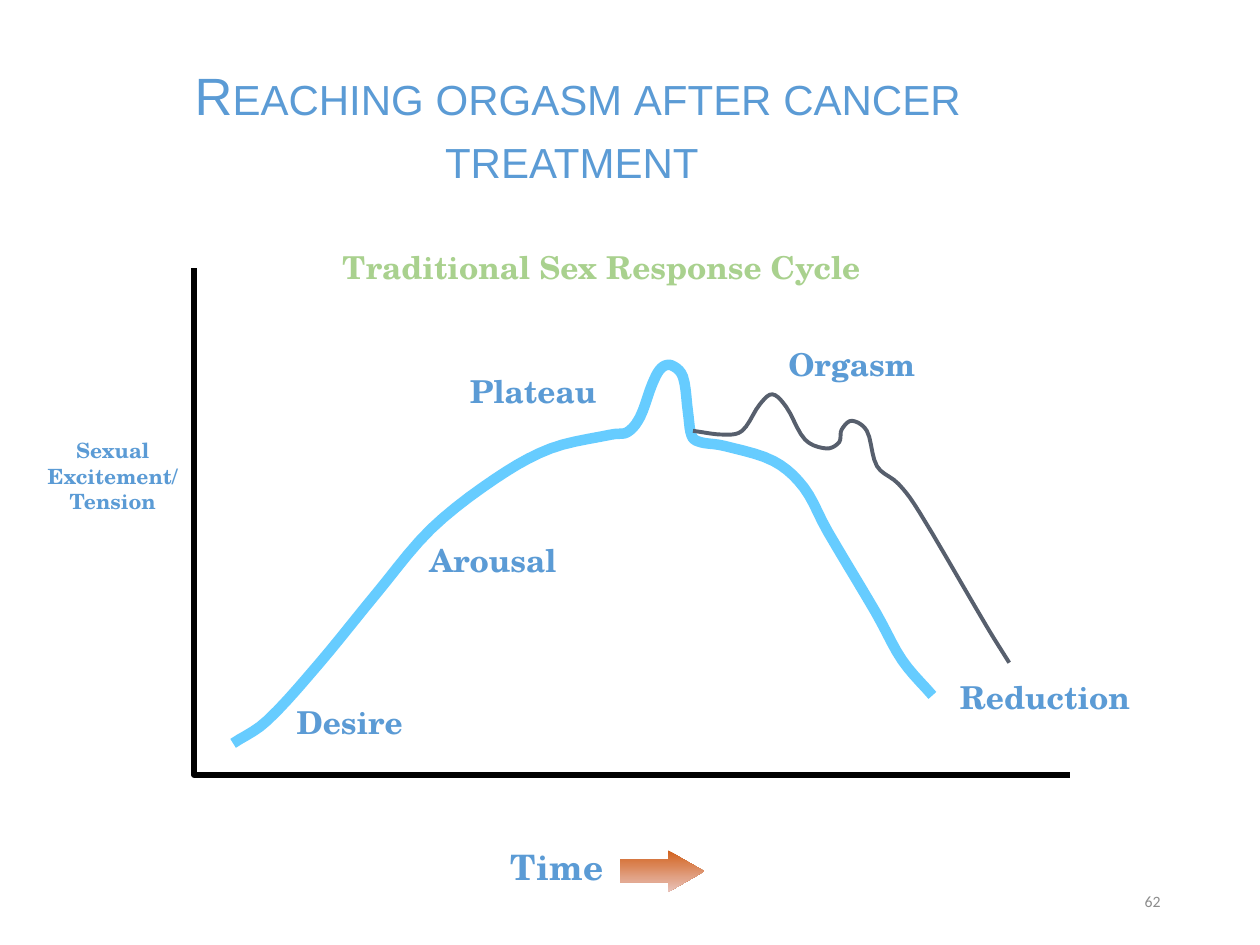
from copy import deepcopy
from itertools import accumulate, chain
from math import dist, sqrt
from pptx import Presentation
from pptx.dml import color
from pptx.enum import shapes, text
from pptx.oxml import ns
from pptx.util import Inches, Pt

SERIF = "TeX Gyre Schola"
BLUE, GREEN, SKY, SLATE, GREY, BLACK = "5B9BD5", "A9D18E", "66CCFF", "575F6D", "8C8C8C", "000000"
ARROW_TOP, ARROW_BOTTOM = "D2611C", "E9C3BB"
LEFT, CENTER, RIGHT = text.PP_ALIGN.LEFT, text.PP_ALIGN.CENTER, text.PP_ALIGN.RIGHT
LABEL_HEIGHT = 0.4
STEPS_PER_SPAN = 5

AXIS_LEFT, AXIS_TOP, AXIS_RIGHT, AXIS_BOTTOM = 1.54, 2.13, 8.49, 6.15
SINGLE_ORGASM = {
    "desire": [(1.85, 5.9), (2.12, 5.72), (2.53, 5.27)],
    "arousal": [(2.98, 4.72), (3.42, 4.2), (3.93, 3.8)],
    "plateau": [(4.37, 3.56), (4.85, 3.45), (4.98, 3.43)],
    "climb": [(5.08, 3.31), (5.18, 3.04), (5.25, 2.92)],
    "orgasm": [(5.33, 2.9), (5.42, 2.99), (5.46, 3.27), (5.49, 3.46)],
    "easing": [(5.56, 3.51), (5.75, 3.54), (6.14, 3.66)],
    "reduction": [(6.38, 3.87), (6.57, 4.22), (6.95, 4.86), (7.16, 5.24), (7.4, 5.52)],
}
REPEAT_ORGASMS = {
    "plateau": [(5.5, 3.42), (5.74, 3.45), (5.89, 3.42)],
    "second orgasm": [(6.03, 3.21), (6.13, 3.13), (6.24, 3.23)],
    "dip": [(6.39, 3.49), (6.56, 3.56), (6.66, 3.51)],
    "third orgasm": [(6.68, 3.41), (6.76, 3.34), (6.88, 3.42), (6.96, 3.7)],
    "reduction": [(7.13, 3.84), (7.3, 4.07), (7.83, 4.97), (8.01, 5.26)],
}
PHASE_LABELS = [
    ("Desire", 2.25, 5.53, 1.05, CENTER),
    ("Arousal", 3.31, 4.24, 1.22, LEFT),
    ("Plateau", 3.63, 2.9, 1.22, LEFT),
    ("Orgasm", 6.15, 2.69, 1.22, CENTER),
    ("Reduction", 7.52, 5.33, 1.56, LEFT),
]


def rgb(value):
    return color.RGBColor.from_string(value)


def assign(target, values):
    for name, value in values.items():
        setattr(target, name, value)


def hermite(start, end, start_slope, end_slope, span, t):
    return ((2 * t**3 - 3 * t**2 + 1) * start + (3 * t**2 - 2 * t**3) * end
            + span * ((t**3 - 2 * t**2 + t) * start_slope + (t**3 - t**2) * end_slope))


def smooth_path(stages):
    anchors = list(chain.from_iterable(stages.values()))
    last = len(anchors) - 1
    knots = list(accumulate((sqrt(dist(a, b)) for a, b in zip(anchors, anchors[1:])), initial=0))

    def slope(index, axis):
        before, after = max(index - 1, 0), min(index + 1, last)
        return (anchors[after][axis] - anchors[before][axis]) / (knots[after] - knots[before])

    path = [anchors[0]]
    for i in range(last):
        for step in range(1, STEPS_PER_SPAN + 1):
            path.append(tuple(
                hermite(anchors[i][axis], anchors[i + 1][axis], slope(i, axis),
                        slope(i + 1, axis), knots[i + 1] - knots[i], step / STEPS_PER_SPAN)
                for axis in (0, 1)))
    return path


def write(frame, words, size, shade, font=SERIF, bold=True, align=LEFT):
    paragraph = frame.paragraphs[0]
    paragraph.text = words
    paragraph.alignment = align
    for run in paragraph.runs:
        assign(run.font, {"size": Pt(size), "name": font, "bold": bold})
        run.font.color.rgb = rgb(shade)
    for line_break in paragraph._p.findall(ns.qn("a:br")):
        line_break.insert(0, deepcopy(paragraph.runs[0].font._element))
    return paragraph


def add_title(slide, words):
    title = slide.shapes.title
    assign(title, {"left": Inches(0.5), "top": Inches(0.3),
                   "width": Inches(8.17), "height": Inches(1.25)})
    assign(title.text_frame, {"auto_size": text.MSO_AUTO_SIZE.NONE,
                              "vertical_anchor": text.MSO_ANCHOR.BOTTOM})
    heading = write(title.text_frame, words, 30, BLUE, "Arial", False, CENTER)
    heading.runs[0].font._element.set("cap", "small")


def add_label(slide, place, words, size=18, shade=BLUE, wrap=False,
              anchor=text.MSO_ANCHOR.MIDDLE, grow=True, **style):
    frame = slide.shapes.add_textbox(*map(Inches, place)).text_frame
    sizing = text.MSO_AUTO_SIZE
    assign(frame, {
        "word_wrap": wrap,
        "vertical_anchor": anchor,
        "auto_size": sizing.SHAPE_TO_FIT_TEXT if grow else sizing.NONE,
    })
    write(frame, words, size, shade, **style)


def add_path(slide, points, shade, width):
    start, *rest = [(Inches(x), Inches(y)) for x, y in points]
    builder = slide.shapes.build_freeform(*start)
    builder.add_line_segments(rest, close=False)
    outline = builder.convert_to_shape()
    outline.shadow.inherit = False
    outline.fill.background()
    outline.line.color.rgb = rgb(shade)
    outline.line.width = Pt(width)


def add_time_arrow(slide, place):
    arrow = slide.shapes.add_shape(shapes.MSO_SHAPE.RIGHT_ARROW, *map(Inches, place))
    arrow.adjustments[0], arrow.adjustments[1] = 0.54, 0.87
    arrow.shadow.inherit = False
    arrow.line.fill.background()
    arrow.fill.gradient()
    arrow.fill.gradient_angle = 270
    shades = (ARROW_TOP, ARROW_BOTTOM)
    for position, (stop, shade) in enumerate(zip(arrow.fill.gradient_stops, shades)):
        stop.position = position
        stop.color.rgb = rgb(shade)


def add_response_curves(slide):
    axes = [(AXIS_LEFT, AXIS_TOP), (AXIS_LEFT, AXIS_BOTTOM), (AXIS_RIGHT, AXIS_BOTTOM)]
    add_path(slide, axes, BLACK, 3)
    for stages, shade, width in ((SINGLE_ORGASM, SKY, 6), (REPEAT_ORGASMS, SLATE, 2.25)):
        add_path(slide, smooth_path(stages), shade, width)


def main():
    deck = Presentation()
    deck.slide_width, deck.slide_height = Inches(10), Inches(7.5)
    slide = deck.slides.add_slide(deck.slide_layouts[5])
    add_title(slide, "Reaching orgasm after cancer treatment ")
    add_label(slide, (7.06, 6.95, 2.25, LABEL_HEIGHT), "62", 9, GREY, wrap=True, grow=False,
              font="Calibri", bold=False, align=RIGHT)
    add_response_curves(slide)
    for phase, left, top, width, align in PHASE_LABELS:
        add_label(slide, (left, top, width, LABEL_HEIGHT), phase, align=align)
    add_label(slide, (0.25, 3.42, 1.29, 0.71), "Sexual\vExcitement/\vTension", 12,
              wrap=True, align=CENTER)
    add_label(slide, (3.95, 6.66, 0.94, 0.44), "Time", 20, align=CENTER)
    add_time_arrow(slide, (4.92, 6.75, 0.67, 0.33))
    add_label(slide, (2.62, 1.92, 4.33, LABEL_HEIGHT), "Traditional Sex Response Cycle",
              shade=GREEN, wrap=True, anchor=text.MSO_ANCHOR.TOP)
    deck.save("out.pptx")


if __name__ == "__main__":
    main()
